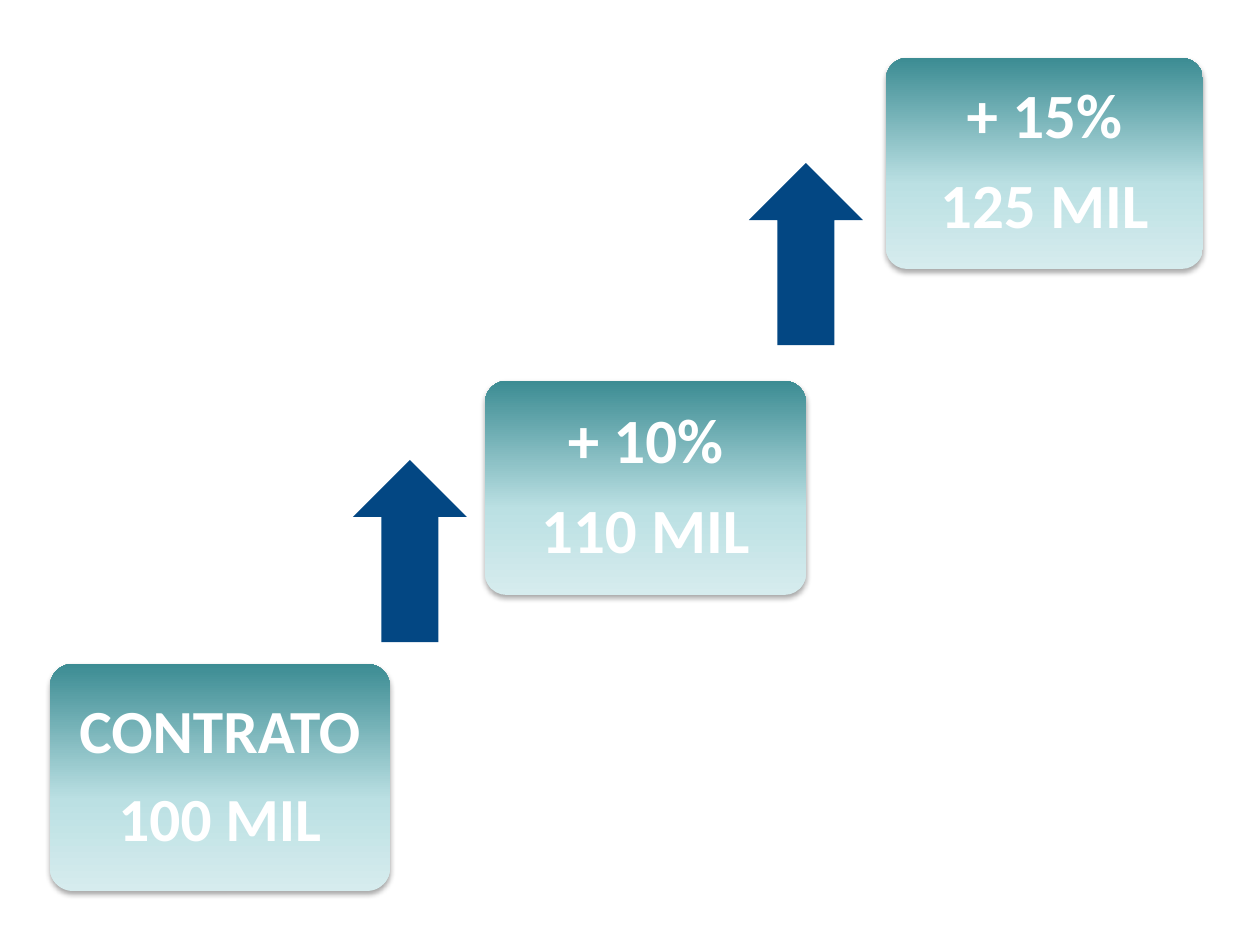
from dataclasses import dataclass

import pptx
import pptx.dml.color
import pptx.enum.shapes
import pptx.enum.text
import pptx.oxml
import pptx.oxml.ns
import pptx.util

RGB = pptx.dml.color.RGBColor
SHAPE = pptx.enum.shapes.MSO_SHAPE

PX_PER_INCH = 126
WHITE = RGB(0xFF, 0xFF, 0xFF)
BLACK = RGB(0x00, 0x00, 0x00)
NAVY = RGB(0x03, 0x47, 0x83)
PALE_TEAL = RGB(0xD6, 0xEC, 0xEE)
LIGHT_TEAL = RGB(0xBB, 0xE0, 0xE3)
DARK_TEAL = RGB(0x3C, 0x8C, 0x93)
GRADIENT = ((0, PALE_TEAL), (40, LIGHT_TEAL), (100, DARK_TEAL))

FONT = "Calibri"
INSET = 19
ARROW_SIZE = (114, 182)


@dataclass(frozen=True)
class Step:
    left: int
    top: int
    width: int
    height: int
    lines: tuple[str, str]
    size: int = 36


STEPS = (
    Step(50, 664, 340, 227, ("CONTRATO", "100 MIL"), 35),
    Step(485, 381, 321, 214, ("+ 10%", "110 MIL")),
    Step(886, 58, 317, 211, ("+ 15%", "125 MIL")),
)
ARROWS = ((353, 460), (749, 163))


def px(n: int) -> int:
    return round(n * pptx.util.Inches(1) / PX_PER_INCH)


def add_gradient(sp) -> None:
    """Fill a shape from pale at the bottom to dark at the top."""
    stops = "".join(
        f'<a:gs pos="{pos * 1000}"><a:srgbClr val="{color}"/></a:gs>'
        for pos, color in GRADIENT
    )
    sp._element.spPr.append(pptx.oxml.parse_xml(
        f'<a:gradFill {pptx.oxml.ns.nsdecls("a")} rotWithShape="1">'
        f'<a:gsLst>{stops}</a:gsLst><a:lin ang="16200000" scaled="0"/></a:gradFill>'
    ))


def add_shadow(sp) -> None:
    """Drop a soft shadow below; call after the fill and line are set."""
    sp._element.spPr.append(pptx.oxml.parse_xml(
        f'<a:effectLst {pptx.oxml.ns.nsdecls("a")}>'
        '<a:outerShdw blurRad="40000" dist="23000" dir="5400000" rotWithShape="0">'
        f'<a:srgbClr val="{BLACK}"><a:alpha val="35000"/></a:srgbClr>'
        '</a:outerShdw></a:effectLst>'
    ))


def add_step(slide, step: Step) -> None:
    sp = slide.shapes.add_shape(
        SHAPE.ROUNDED_RECTANGLE,
        px(step.left), px(step.top), px(step.width), px(step.height),
    )
    sp.adjustments[0] = 0.1
    add_gradient(sp)
    sp.line.fill.background()
    add_shadow(sp)

    tf = sp.text_frame
    tf.word_wrap = True
    tf.vertical_anchor = pptx.enum.text.MSO_ANCHOR.MIDDLE
    tf.margin_left = tf.margin_right = tf.margin_top = tf.margin_bottom = px(INSET)
    tf.text = "\n".join(step.lines)
    for p in tf.paragraphs:
        p.alignment = pptx.enum.text.PP_ALIGN.CENTER
        p.line_spacing = 0.9
        p.space_after = pptx.util.Pt(step.size * 0.35)
        p.font.name = FONT
        p.font.size = pptx.util.Pt(step.size)
        p.font.bold = True
        p.font.color.rgb = WHITE


def add_up_arrow(slide, left: int, top: int) -> None:
    width, height = ARROW_SIZE
    sp = slide.shapes.add_shape(
        SHAPE.UP_ARROW, px(left), px(top), px(width), px(height)
    )
    sp.shadow.inherit = False
    sp.fill.solid()
    sp.fill.fore_color.rgb = NAVY
    sp.line.fill.background()


def main() -> None:
    prs = pptx.Presentation()
    prs.slide_width = px(1260)
    prs.slide_height = px(945)
    slide = prs.slides.add_slide(prs.slide_layouts.get_by_name("Blank"))
    for step in STEPS:
        add_step(slide, step)
    for left, top in ARROWS:
        add_up_arrow(slide, left, top)
    prs.save("out.pptx")


if __name__ == "__main__":
    main()
